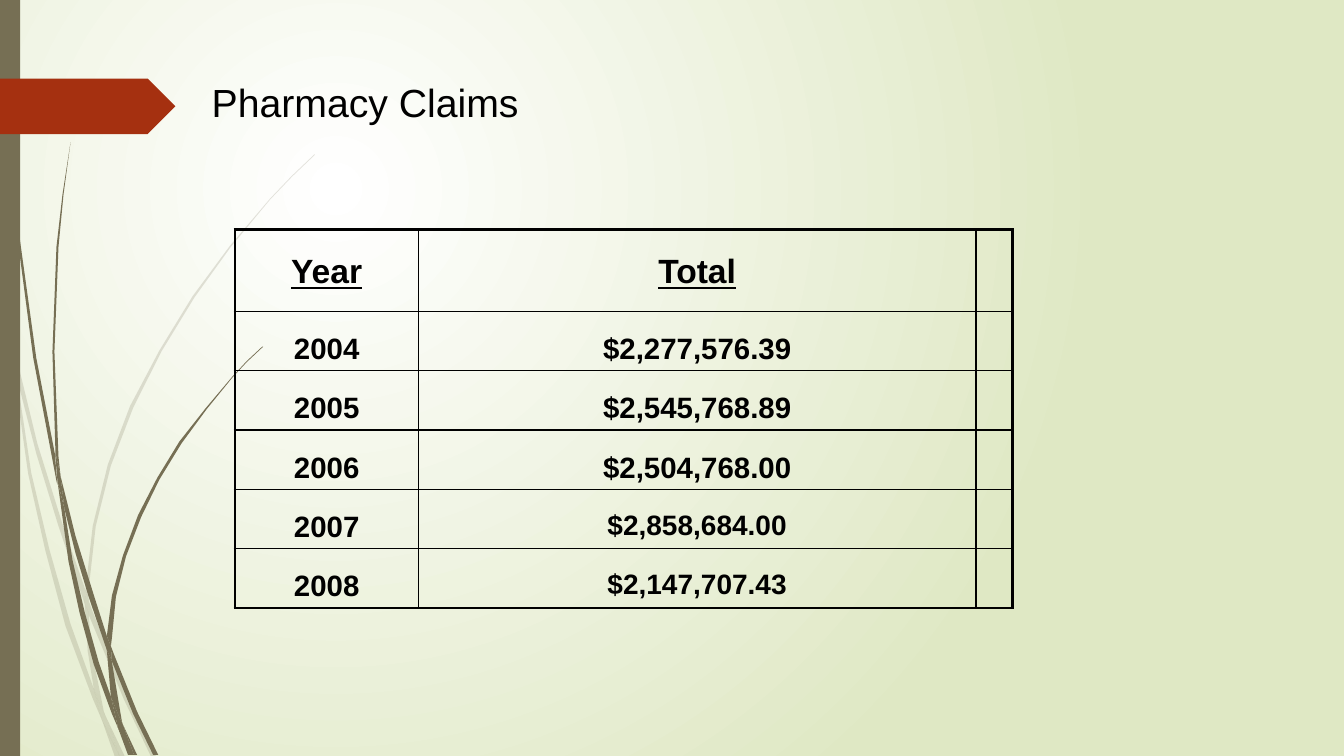
from lxml import etree
from pptx import Presentation
from pptx.dml.color import RGBColor
from pptx.enum.shapes import MSO_SHAPE
from pptx.enum.text import MSO_ANCHOR, MSO_AUTO_SIZE, PP_ALIGN
from pptx.oxml.ns import qn
from pptx.util import Inches, Pt

RECTANGLE, PENTAGON = MSO_SHAPE.RECTANGLE, MSO_SHAPE.PENTAGON
TOP, BOTTOM = MSO_ANCHOR.TOP, MSO_ANCHOR.BOTTOM
LEFT, CENTER = PP_ALIGN.LEFT, PP_ALIGN.CENTER
NO_AUTOFIT = MSO_AUTO_SIZE.NONE

BLACK = RGBColor(0x00, 0x00, 0x00)
WHITE = RGBColor(0xFF, 0xFF, 0xFF)
PALE_GREEN = RGBColor(0xDF, 0xE8, 0xC4)
OLIVE = RGBColor(0x76, 0x6F, 0x54)
RUST = RGBColor(0xA5, 0x30, 0x10)
FONT = "Arial"
THIN, THICK = 1, 2.25

# Grass: outline corners of each piece of blade, in inches
PALE_BLADES = [
    [(0.11, 3.5), (0.09, 3.22), (0, 2.82), (0, 2.99), (0.1, 3.44)],
    [(0.58, 5.22), (0.84, 5.99), (0.85, 5.86), (0.62, 5.2), (0.37, 4.4), (0.14, 3.45),
     (0.17, 3.76), (0.36, 4.5)],
    [(0.92, 6.07), (0.88, 5.96), (0.88, 6.1), (1.23, 6.94), (1.5, 7.51), (1.55, 7.51),
     (1.27, 6.92)],
    [(1.19, 7.51), (1.24, 7.51), (1.05, 7.11)],
    [(0.93, 6.83), (0.7, 6.19), (0.49, 5.45), (0.31, 4.69), (0.17, 3.76), (0.11, 3.5),
     (0.28, 4.7), (0.45, 5.46), (0.65, 6.21), (0.92, 6.93), (1.01, 7.14), (0.99, 7.07)],
    [(0.84, 5.99), (0.87, 6.46), (0.93, 6.83), (0.96, 6.92), (1.05, 7.11), (1.03, 7.06),
     (0.91, 6.46), (0.88, 6.1), (0.88, 6.08)],
    [(0.88, 5.84), (0.95, 5.22), (1.1, 4.62), (1.32, 4.05), (1.6, 3.49), (1.93, 2.95),
     (2.29, 2.45), (2.68, 1.98), (2.9, 1.75), (3.12, 1.54), (3.12, 1.53), (2.89, 1.75),
     (2.68, 1.97), (2.28, 2.44), (1.91, 2.94), (1.58, 3.48), (1.29, 4.03), (1.07, 4.61),
     (0.92, 5.22), (0.85, 5.84), (0.85, 5.86), (0.88, 5.96)],
    [(1.01, 7.14), (1.14, 7.51), (1.19, 7.51)],
    [(0.88, 6.08), (0.88, 6.1), (0.88, 5.96), (0.85, 5.86), (0.84, 5.99)],
    [(0.96, 6.92), (0.93, 6.83), (0.99, 7.07), (1.01, 7.14), (1.19, 7.51), (1.05, 7.11)],
]
DARK_BLADES = [
    [(0.07, 1.1), (0.17, 2.33), (0.33, 3.55), (0.56, 4.77), (0.57, 4.81), (0.55, 4.57),
     (0.55, 4.53), (0.36, 3.55), (0.19, 2.32), (0.08, 1.09), (0.05, 0.48), (0.04, 0),
     (0.03, 0), (0.04, 0.48)],
    [(0.88, 5.92), (1.06, 6.45), (1.06, 6.33), (1.06, 6.31), (0.93, 5.9), (0.75, 5.32),
     (0.6, 4.72), (0.64, 5.05), (0.75, 5.49)],
    [(1.13, 6.49), (1.1, 6.41), (1.11, 6.56), (1.32, 7.08), (1.52, 7.49), (1.57, 7.49),
     (1.36, 7.06)],
    [(1.1, 6.91), (0.98, 6.57), (0.84, 6.07), (0.72, 5.56), (0.64, 5.05), (0.57, 4.77),
     (0.68, 5.57), (0.79, 6.08), (0.93, 6.59), (1.11, 7.08), (1.17, 7.22), (1.16, 7.17)],
    [(0.6, 4.72), (0.58, 4.53), (0.54, 3.49), (0.58, 2.45), (0.63, 1.93), (0.7, 1.41),
     (0.62, 1.93), (0.56, 2.45), (0.52, 3.49), (0.55, 4.49)],
    [(1.33, 7.49), (1.36, 7.49), (1.22, 7.19)],
    [(0.57, 4.77), (0.64, 5.05), (0.6, 4.72), (0.55, 4.49), (0.55, 4.53)],
    [(1.11, 6.33), (1.15, 5.92), (1.25, 5.52), (1.4, 5.13), (1.58, 4.76), (1.8, 4.4),
     (2.05, 4.06), (2.31, 3.74), (2.45, 3.59), (2.61, 3.44), (2.6, 3.44), (2.45, 3.58),
     (2.31, 3.73), (2.04, 4.05), (1.78, 4.38), (1.56, 4.74), (1.37, 5.11), (1.22, 5.51),
     (1.11, 5.91), (1.06, 6.31), (1.1, 6.41)],
    [(1.17, 7.22), (1.27, 7.49), (1.31, 7.49)],
    [(1.06, 6.45), (1.1, 6.91), (1.16, 7.06), (1.22, 7.19), (1.21, 7.16), (1.11, 6.56),
     (1.09, 6.51)],
    [(1.06, 6.45), (1.09, 6.51), (1.11, 6.56), (1.1, 6.41), (1.06, 6.31), (1.06, 6.33)],
    [(1.16, 7.06), (1.1, 6.91), (1.16, 7.17), (1.17, 7.22), (1.3, 7.49), (1.33, 7.49),
     (1.22, 7.19)],
]

COLUMN_WIDTHS = [1.82, 5.53, 0.36]
HEADER_HEIGHT, ROW_HEIGHT = 0.81, 0.58
# Year, total, size of the total
CLAIMS = [
    ("2004", "$2,277,576.39", 21),
    ("2005", "$2,545,768.89", 21),
    ("2006", "$2,504,768.00", 21),
    ("2007", "$2,858,684.00", 20),
    ("2008", "$2,147,707.43", 20),
]


def set_background(slide):
    fill = slide.background.fill
    fill.gradient()
    for stop, position, color in zip(fill.gradient_stops, (0, 1), (WHITE, PALE_GREEN)):
        stop.position = position
        stop.color.rgb = color
    linear = next(slide.background._cSld.iter(qn("a:lin")))
    radial = etree.Element(qn("a:path"), path="circle")
    etree.SubElement(radial, qn("a:fillToRect"), l="50000", t="50000", r="100000", b="100000")
    linear.getparent().replace(linear, radial)


def paint(shape, color, alpha=None):
    shape.shadow.inherit = False
    shape.fill.solid()
    shape.fill.fore_color.rgb = color
    shape.line.fill.background()
    if alpha:
        srgb = next(shape._element.spPr.iter(qn("a:srgbClr")))
        etree.SubElement(srgb, qn("a:alpha"), val=str(alpha * 1000))


def add_blade(slide, outline, alpha=None):
    vertices = [(Inches(x), Inches(y)) for x, y in outline]
    builder = slide.shapes.build_freeform(*vertices[0])
    builder.add_line_segments(vertices[1:], close=True)
    paint(builder.convert_to_shape(), OLIVE, alpha)


def add_block(slide, kind, left, top, width, height, color):
    block = slide.shapes.add_shape(
        kind, Inches(left), Inches(top), Inches(width), Inches(height))
    paint(block, color)


def set_title(slide, text):
    title = slide.shapes.title
    title.left, title.top = Inches(2), Inches(0.38)
    title.width, title.height = Inches(8.36), Inches(0.91)
    frame = title.text_frame
    frame.text = text
    frame.word_wrap = True
    frame.auto_size = NO_AUTOFIT
    frame.vertical_anchor = BOTTOM
    para = frame.paragraphs[0]
    para.alignment = LEFT
    para.font.name, para.font.size = FONT, Pt(28)
    para.font.color.rgb = BLACK


def set_borders(cell, widths):
    properties = cell._tc.get_or_add_tcPr()
    for position, (side, width) in enumerate(widths.items()):
        line = etree.Element(qn(f"a:ln{side}"), w=str(Pt(width)))
        solid = etree.SubElement(line, qn("a:solidFill"))
        etree.SubElement(solid, qn("a:srgbClr"), val=str(BLACK))
        properties.insert(position, line)


def fill_cell(cell, text, size, underline):
    cell.vertical_anchor = TOP
    cell.fill.background()
    if not text:
        return
    cell.text = text
    para = cell.text_frame.paragraphs[0]
    para.alignment = CENTER
    para.line_spacing = 1.5
    para.font.name, para.font.size = FONT, Pt(size)
    para.font.bold, para.font.underline = True, underline
    para.font.color.rgb = BLACK


def add_claims_table(slide):
    rows = [[("Year", 24), ("Total", 24), ("", 24)]]
    rows += [[(year, 21), (total, size), ("", 21)] for year, total, size in CLAIMS]
    heights = [HEADER_HEIGHT] + [ROW_HEIGHT] * len(CLAIMS)
    table = slide.shapes.add_table(
        len(rows), len(COLUMN_WIDTHS), Inches(2.33), Inches(2.28),
        Inches(sum(COLUMN_WIDTHS)), Inches(sum(heights))).table
    table.first_row = table.horz_banding = False
    for column, width in zip(table.columns, COLUMN_WIDTHS):
        column.width = Inches(width)
    last_row, last_column = len(rows) - 1, len(COLUMN_WIDTHS) - 1
    for r, row in enumerate(rows):
        table.rows[r].height = Inches(heights[r])
        for c, (text, size) in enumerate(row):
            cell = table.cell(r, c)
            fill_cell(cell, text, size, underline=r == 0)
            set_borders(cell, {
                "L": THICK if c == 0 else THIN,
                "R": THICK if c == last_column else THIN,
                "T": THICK if r == 0 else THIN,
                "B": THICK if r == last_row else THIN,
            })


def main():
    deck = Presentation()
    deck.slide_width, deck.slide_height = Inches(13.33), Inches(7.5)
    slide = deck.slides.add_slide(deck.slide_layouts[5])
    set_background(slide)

    # Grass, side bar and title marker
    for outline in PALE_BLADES:
        add_blade(slide, outline, alpha=20)
    for outline in DARK_BLADES:
        add_blade(slide, outline)
    add_block(slide, RECTANGLE, 0, 0, 0.2, 7.5, OLIVE)
    add_block(slide, PENTAGON, 0, 0.78, 1.74, 0.55, RUST)

    # Content
    add_claims_table(slide)
    set_title(slide, "Pharmacy Claims")
    deck.save("out.pptx")


if __name__ == "__main__":
    main()
